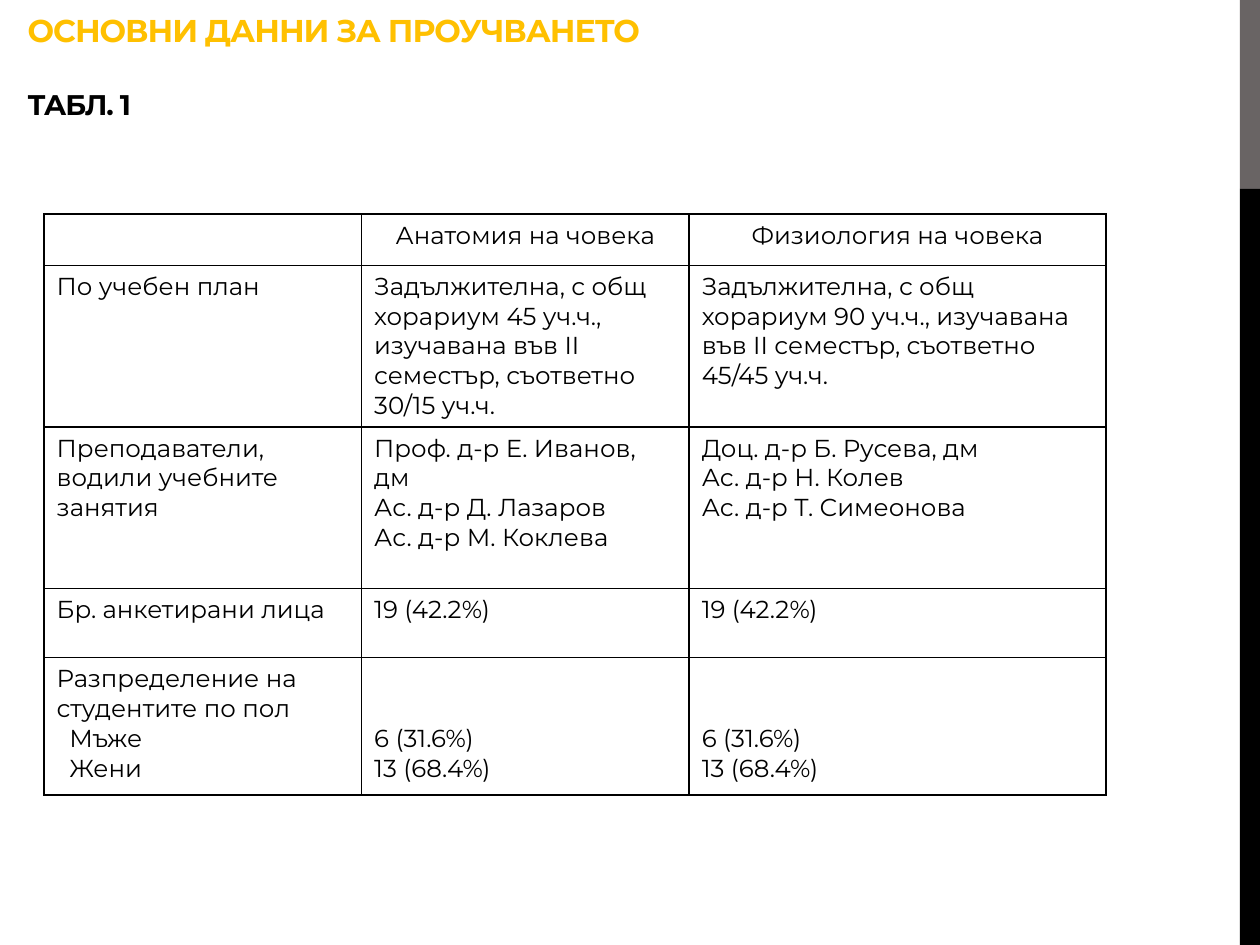
from dataclasses import dataclass

from lxml.etree import SubElement
from pptx import Presentation
from pptx.dml.color import RGBColor
from pptx.enum.shapes import MSO_SHAPE as Shape
from pptx.enum.text import MSO_ANCHOR as Anchor, MSO_AUTO_SIZE as AutoSize, PP_ALIGN as Align
from pptx.oxml.ns import qn
from pptx.util import Inches, Pt


@dataclass(frozen=True)
class Theme:
    font: str = "Montserrat"
    accent: str = "FFC000"
    ink: str = "000000"
    gray: str = "696464"
    title: float = 18
    caption: float = 16.2
    body: float = 14
    border: float = 1


class SlideBuilder:
    COLUMNS, ROWS = 100, 75

    def __init__(self, prs, theme):
        self.theme = theme
        self.unit_x = prs.slide_width / self.COLUMNS
        self.unit_y = prs.slide_height / self.ROWS
        self.s = prs.slides.add_slide(prs.slide_layouts[5])

    def x(self, columns):
        return round(columns * self.unit_x)

    def y(self, rows):
        return round(rows * self.unit_y)

    def area(self, left, top, width, height):
        return self.x(left), self.y(top), self.x(width), self.y(height)

    def run(self, p, text, size, color, bold=False):
        r = p.add_run()
        r.text = text
        r.font.name = self.theme.font
        r.font.size = Pt(size)
        r.font.bold = bold
        r.font.color.rgb = RGBColor.from_string(color)
        return r

    def bar(self, area, color):
        sp = self.s.shapes.add_shape(Shape.RECTANGLE, *self.area(*area))
        sp.shadow.inherit = False
        sp.fill.solid()
        sp.fill.fore_color.rgb = RGBColor.from_string(color)
        sp.line.fill.background()

    def title(self, area, lines, gap):
        sp = self.s.shapes.title
        sp.left, sp.top, sp.width, sp.height = self.area(*area)
        tf = sp.text_frame
        tf.word_wrap = True
        tf.auto_size = AutoSize.NONE
        tf.vertical_anchor = Anchor.BOTTOM
        tf.margin_bottom = Inches(0.03)
        for i, (text, size, color) in enumerate(lines):
            p = tf.add_paragraph() if i else tf.paragraphs[0]
            p.alignment = Align.LEFT
            p.line_spacing = 1.0
            p.space_before = Pt(gap if i else 0)
            r = self.run(p, text, size, color, bold=True)
            r.font._element.set("spc", "-60")

    def borders(self, cell):
        tc_pr = cell._tc.get_or_add_tcPr()
        for side in ("lnL", "lnR", "lnT", "lnB"):
            ln = SubElement(tc_pr, qn(f"a:{side}"), w=str(Pt(self.theme.border)))
            fill = SubElement(ln, qn("a:solidFill"))
            SubElement(fill, qn("a:srgbClr"), val=self.theme.ink)

    def cell(self, cell, lines, align, indented):
        self.borders(cell)
        cell.fill.background()
        for i, text in enumerate(lines):
            p = cell.text_frame.add_paragraph() if i else cell.text_frame.paragraphs[0]
            if indented and i:
                p._p.get_or_add_pPr().set("marL", str(Inches(0.1)))
            p.alignment = align
            self.run(p, text, self.theme.body, self.theme.ink)

    def table(self, area, widths, heights, rows):
        frame = self.s.shapes.add_table(len(rows), len(widths), *self.area(*area))
        table = frame.table
        table.first_row = table.horz_banding = False
        for column, width in zip(table.columns, widths):
            column.width = self.x(width)
        for row, height in zip(table.rows, heights):
            row.height = self.y(height)
        last = len(rows) - 1
        for i, row in enumerate(rows):
            for j, lines in enumerate(row):
                cell = table.cell(i, j)
                align = Align.LEFT if i else Align.CENTER
                self.cell(cell, lines, align, indented=i == last and j == 0)
                if i == last and j:
                    cell.vertical_anchor = Anchor.BOTTOM
                    cell.margin_bottom = Inches(0.09)


def main():
    prs = Presentation()
    prs.slide_width, prs.slide_height = Inches(10), Inches(7.5)
    theme = Theme()
    slide = SlideBuilder(prs, theme)

    slide.bar((98.4, 0, 1.6, 15), theme.gray)
    slide.bar((98.4, 15, 1.6, 60), theme.ink)
    slide.title(
        (1.2, 6, 95.3, 3.9),
        [
            ("ОСНОВНИ ДАННИ ЗА ПРОУЧВАНЕТО", theme.title, theme.accent),
            ("ТАБЛ. 1", theme.caption, theme.ink),
        ],
        gap=22,
    )

    respondents = ["19 (42.2%)"]
    by_gender = ["6 (31.6%)", "13 (68.4%)"]
    rows = [
        [[], ["Анатомия на човека"], ["Физиология на човека"]],
        [
            ["По учебен план"],
            ["Задължителна, с общ хорариум 45 уч.ч., изучавана във II семестър, "
             "съответно 30/15 уч.ч."],
            ["Задължителна, с общ хорариум 90 уч.ч., изучавана във II семестър, "
             "съответно 45/45 уч.ч."],
        ],
        [
            ["Преподаватели, водили учебните занятия"],
            ["Проф. д-р Е. Иванов, дм", "Ас. д-р Д. Лазаров", "Ас. д-р М. Коклева"],
            ["Доц. д-р Б. Русева, дм", "Ас. д-р Н. Колев", "Ас. д-р Т. Симеонова"],
        ],
        [["Бр. анкетирани лица"], respondents, respondents],
        [["Разпределение на студентите по пол", "Мъже", "Жени"], by_gender, by_gender],
    ]
    widths = [25.2, 26, 33.1]
    heights = [3.9, 12.8, 12.8, 5.5, 10.9]
    slide.table((3.5, 17, sum(widths), sum(heights)), widths, heights, rows)

    prs.save("out.pptx")


if __name__ == "__main__":
    main()
